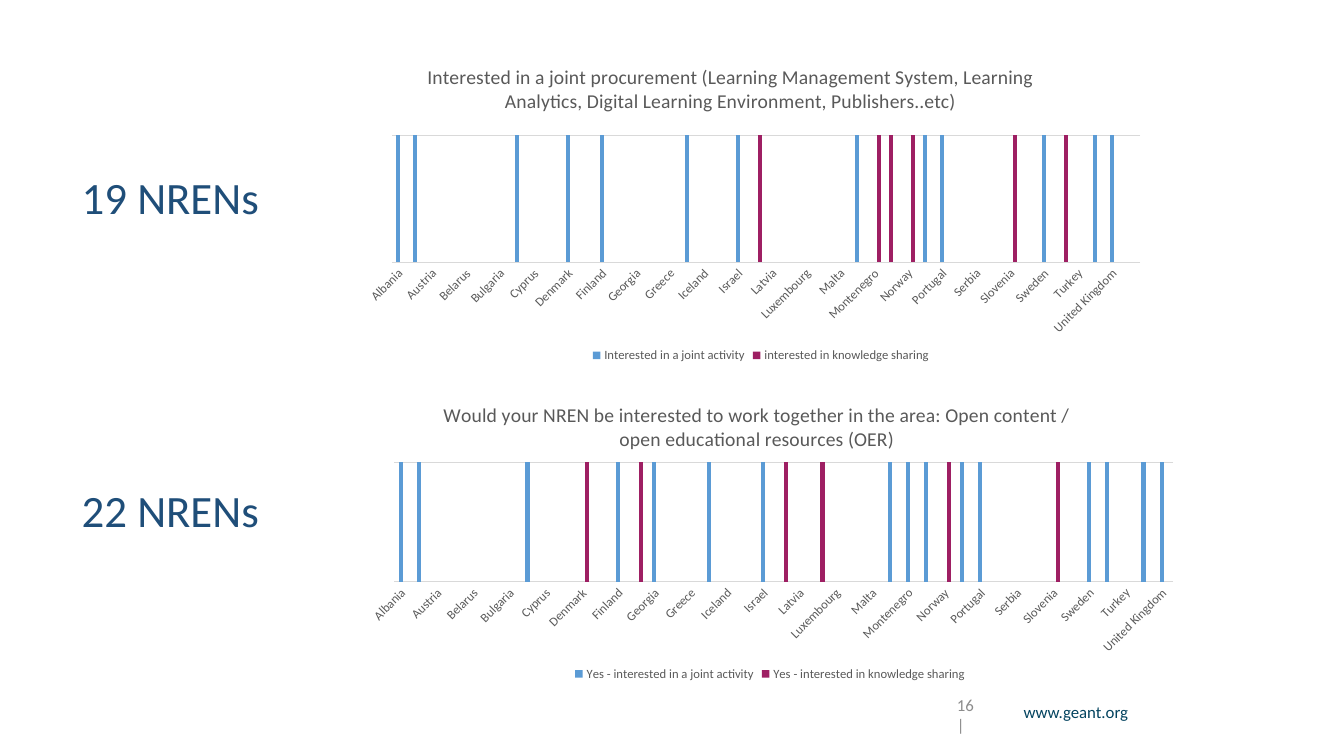
from dataclasses import dataclass, field

from lxml.etree import SubElement
from pptx import Presentation
from pptx.chart.data import CategoryChartData
from pptx.dml.color import RGBColor
from pptx.enum.chart import XL_CHART_TYPE, XL_LEGEND_POSITION, XL_TICK_MARK
from pptx.enum.text import MSO_ANCHOR, MSO_AUTO_SIZE, PP_ALIGN
from pptx.oxml import parse_xml
from pptx.oxml.ns import nsdecls, qn
from pptx.util import Emu, Inches, Pt

FONT = "Calibri"
BLUE, PLUM, NAVY = "5B9BD5", "9E1F63", "1F4E79"
GREY, RULE = "595959", "D9D9D9"
LANDS = """Albania,Armenia,Austria,Azerbaijan,Belarus,Belgium,Bulgaria,Croatia,Cyprus,
Czech Republic,Denmark,Estonia,Finland,France,Georgia,Germany,Greece,Hungary,Iceland,
Ireland,Israel,Italy,Latvia,Lithuania,Luxembourg,Macedonia,Malta,Moldova,Montenegro,
Netherlands,Norway,Poland,Portugal,Romania,Serbia,Slovakia,Slovenia,Spain,Sweden,
Switzerland,Turkey,Ukraine,United Kingdom""".replace("\n", "").split(",")


@dataclass
class Box:
    """A place on the slide, in percent of its width and height."""
    x: float
    y: float
    w: float
    h: float


@dataclass
class Group:
    """A chart series; hits are the slots of the countries that said yes."""
    name: str
    color: str
    hits: list[int]
    odd: dict[int, str] = field(default_factory=dict)


@dataclass
class Survey:
    title: str
    box: Box
    head: tuple[float, float]
    plot: tuple[float, float, float, float]
    slots: int
    groups: list[Group]


SURVEYS = [
    Survey("Interested in a joint procurement (Learning Management System, Learning "
           "Analytics, Digital Learning Environment, Publishers..etc)",
           Box(24.46, 4.8, 64.29, 43.73), (0.11, 0.07), (0.073, 0.299, 0.866, 0.385), 44,
           [Group("Interested in a joint activity", BLUE,
                  [0, 1, 7, 10, 12, 17, 20, 27, 29, 31, 32, 38, 41, 42], {29: PLUM}),
            Group("interested in knowledge sharing", PLUM, [21, 28, 30, 36, 39])]),
    Survey("Would your NREN be interested to work together in the area: Open content / "
           "open educational resources (OER)",
           Box(25.81, 50.13, 62.94, 40.53), (0.11, 0.06), (0.056, 0.272, 0.921, 0.39), 43,
           [Group("Yes - interested in a joint activity", BLUE,
                  [0, 1, 7, 12, 14, 17, 20, 27, 28, 29, 31, 32, 38, 39, 41, 42]),
            Group("Yes - interested in knowledge sharing", PLUM,
                  [10, 13, 21, 23, 30, 36])]),
]

deck = Presentation()
deck.slide_width, deck.slide_height = Inches(13.33), Inches(7.5)
slide = deck.slides.add_slide(deck.slide_layouts[1])


def rgb(code: str) -> RGBColor:
    return RGBColor.from_string(code)


def spot(box: Box) -> list[Emu]:
    wide, high = deck.slide_width / 100, deck.slide_height / 100
    return [Emu(round(n)) for n in (box.x * wide, box.y * high, box.w * wide, box.h * high)]


def style(font, size: float, color: str) -> None:
    font.name, font.size, font.bold = FONT, Pt(size), False
    font.color.rgb = rgb(color)


def write(shape, text: str, *, box: Box, size: float, color: str, align=PP_ALIGN.LEFT,
          anchor=MSO_ANCHOR.TOP, line: float = 1, left: float = 0.1, right: float = 0.1,
          tab: float = 0) -> None:
    shape.left, shape.top, shape.width, shape.height = spot(box)
    frame = shape.text_frame
    frame.word_wrap, frame.auto_size = True, MSO_AUTO_SIZE.NONE
    frame.vertical_anchor = anchor
    frame.margin_left, frame.margin_right = Inches(left), Inches(right)
    para = frame.paragraphs[0]
    para.alignment, para.line_spacing, para.space_before = align, line, Pt(0)
    props = para._p.get_or_add_pPr()
    props.set("marL", "0")
    props.set("indent", "0")
    SubElement(props, qn("a:buNone"))
    if tab:
        stops = SubElement(props, qn("a:tabLst"))
        SubElement(stops, qn("a:tab"), pos=str(Inches(tab)), algn="l")
    run = para.add_run()
    run.text = text
    style(run.font, size, color)


def fix(part, index: int, inner: bool = False, **sides: float) -> None:
    """Give a chart part a manual layout, as shares of the chart."""
    for old in part.findall(qn("c:layout")):
        part.remove(old)
    rows = '<c:layoutTarget val="inner"/>' if inner else ""
    rows += "".join(f'<c:{key}Mode val="edge"/>' for key in "xy")
    rows += "".join(f'<c:{key} val="{val}"/>' for key, val in sides.items())
    part.insert(index, parse_xml(f'<c:layout {nsdecls("c")}><c:manualLayout>{rows}'
                                 "</c:manualLayout></c:layout>"))


def rule(line) -> None:
    line.color.rgb, line.width = rgb(RULE), Pt(0.75)


def chart(item: Survey) -> None:
    data = CategoryChartData()
    data.categories = LANDS
    for group in item.groups:
        data.add_series(group.name, [100 if n in group.hits else None
                                     for n in range(item.slots)])
    view = slide.shapes.add_chart(XL_CHART_TYPE.COLUMN_CLUSTERED, *spot(item.box), data).chart
    style(view.font, 10, "000000")

    view.has_title = True
    run = view.chart_title.text_frame.paragraphs[0].add_run()
    run.text = item.title
    style(run.font, 14, GREY)
    fix(view.chart_title._element, 1, x=item.head[0], y=item.head[1])
    fix(view._chartSpace.chart.plotArea, 0, True, **dict(zip("xywh", item.plot)))

    view.has_legend = True
    view.legend.position = XL_LEGEND_POSITION.BOTTOM
    view.legend.include_in_layout = False
    style(view.legend.font, 9, GREY)

    lands, score = view.category_axis, view.value_axis
    lands.major_tick_mark = lands.minor_tick_mark = XL_TICK_MARK.NONE
    style(lands.tick_labels.font, 9, GREY)
    lands._element.find(qn("c:txPr")).find(qn("a:bodyPr")).set("rot", "-2700000")
    rule(lands.format.line)
    score.visible, score.has_major_gridlines = False, True
    score.minimum_scale, score.maximum_scale, score.major_unit = 0, 100, 100
    rule(score.major_gridlines.format.line)

    bars = view.plots[0]
    bars.gap_width, bars.overlap, bars.vary_by_categories = 219, -27, False
    for series, group in zip(bars.series, item.groups):
        series.format.fill.solid()
        series.format.fill.fore_color.rgb = rgb(group.color)
        for n, color in group.odd.items():
            fill = series.points[n].format.fill
            fill.solid()
            fill.fore_color.rgb = rgb(color)


def label() -> object:
    return slide.shapes.add_textbox(0, 0, 0, 0)


def main() -> None:
    heads = zip(slide.placeholders, ("19 NRENs", "22 NRENs"), (22.53, 64))
    for shape, text, top in heads:
        write(shape, text, box=Box(5.33, top, 16.65, 9.47), size=32, color=NAVY, line=0.9)
    for item in SURVEYS:
        chart(item)
    write(label(), "www.geant.org", box=Box(72.09, 92.13, 12.6, 4.8), size=12,
          color="03435F", align=PP_ALIGN.RIGHT)
    write(label(), "16\t|", box=Box(69.69, 92.13, 5.48, 4.8), size=12, color="8C8C8C",
          anchor=MSO_ANCHOR.MIDDLE, left=0.2, right=0, tab=0.37)
    deck.save("out.pptx")


if __name__ == "__main__":
    main()
